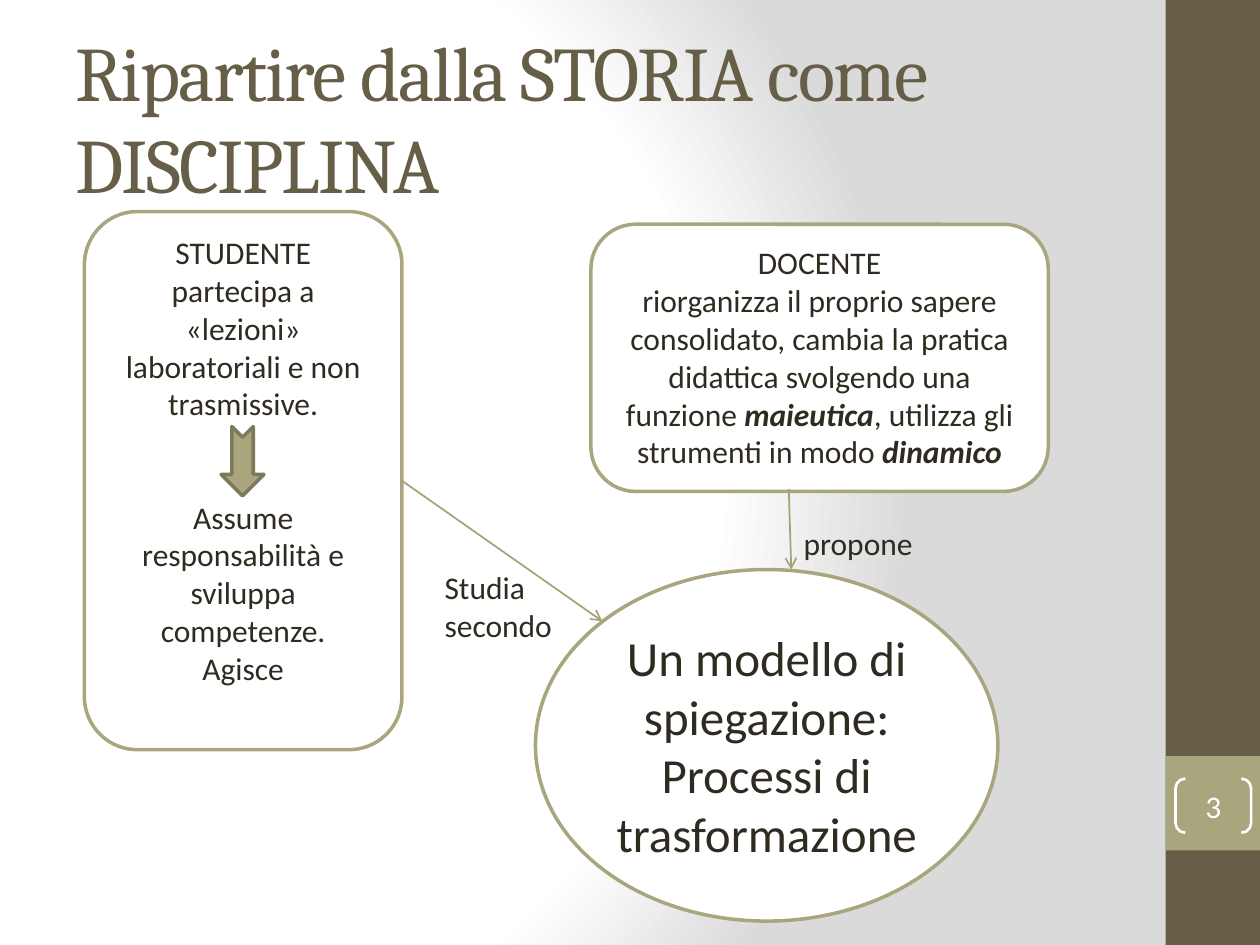
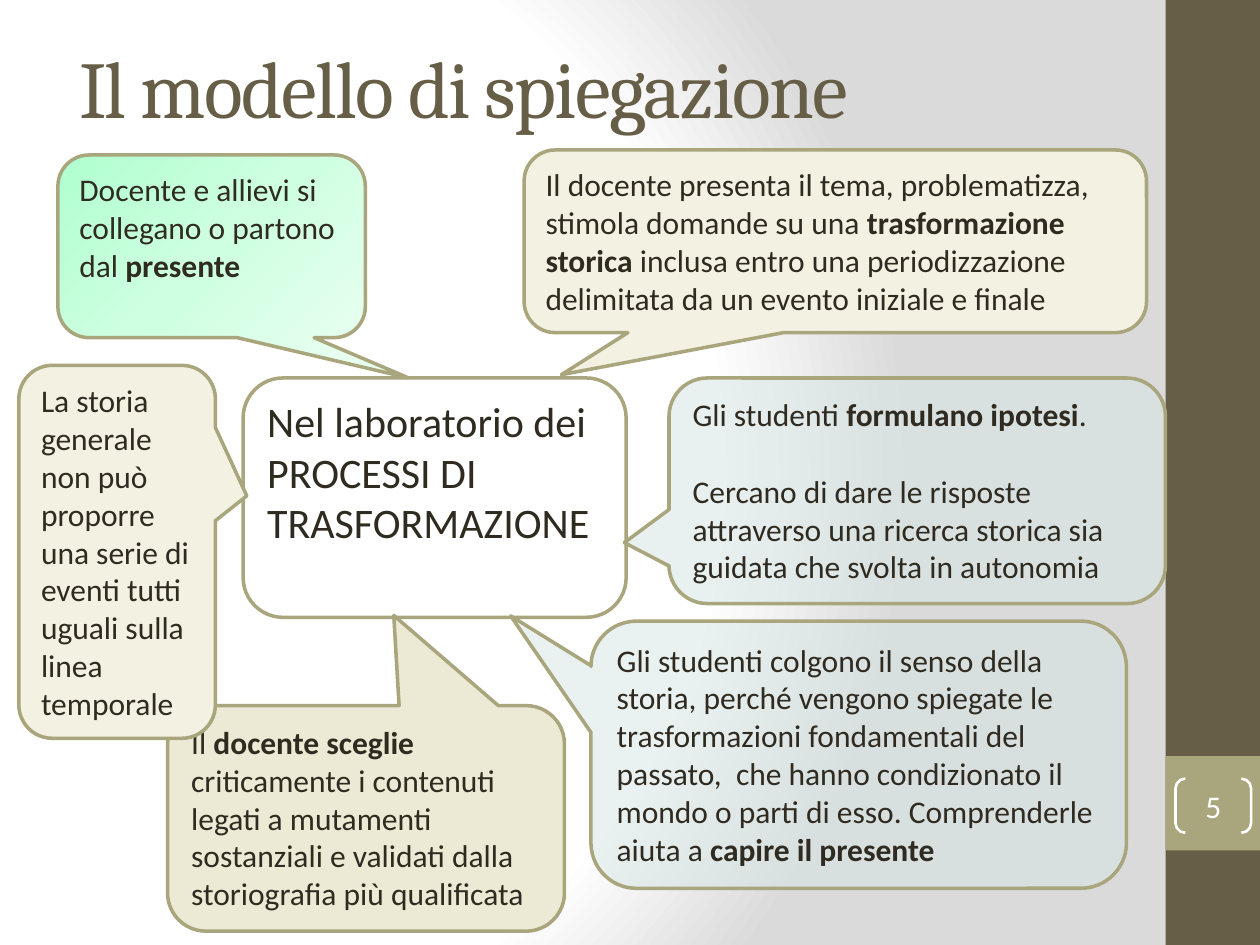
from lxml import etree
from pptx import Presentation, util as u
from pptx.dml.color import RGBColor
from pptx.enum import shapes, text
from pptx.oxml import parse_xml
from pptx.oxml.ns import nsdecls, qn

COLORS = {
    "ink": "2F2B20", "brown": "675E47", "olive": "A9A57C", "arrow": "A6A278",
    "olive_dark": "7D7A5C", "white": "FFFFFF", "grey": "DADADA", "cream": "F2F1E2",
    "sand": "ECEAD4", "mist": "D7E5E5", "mint": "B0FFD0", "mint_mid": "CDFFE0",
    "mint_pale": "E6FFEF",
}
BACKDROP = (
    [(0, "white"), (75, "white"), (100, "grey")],
    '<a:path path="circle"><a:fillToRect l="20000" t="50000" r="100000" b="50000"/></a:path>',
)
MINT = (
    [(0, "mint"), (50, "mint_mid"), (100, "mint_pale")],
    '<a:lin ang="2700000" scaled="0"/>',
)
KINDS = shapes.MSO_SHAPE
CENTER = text.PP_ALIGN.CENTER
LEFT = text.PP_ALIGN.LEFT
MIDDLE = text.MSO_ANCHOR.MIDDLE
TOP = text.MSO_ANCHOR.TOP


def color(name):
    """Return the named palette colour."""
    return RGBColor.from_string(COLORS[name])


def inches(*lengths):
    """Convert several lengths to inches."""
    return [u.Inches(length) for length in lengths]


def fill_gradient(owner, parent, gradient):
    """Give an owner a gradient whose fill element sits in parent."""
    stops, direction = gradient
    marks = "".join(
        f'<a:gs pos="{pos * 1000}"><a:srgbClr val="{COLORS[name]}"/></a:gs>'
        for pos, name in stops
    )
    owner.fill.background()
    parent = owner_parent = parent()
    blank = owner_parent.find(qn("a:noFill"))
    parent.replace(blank, parse_xml(
        f'<a:gradFill {nsdecls("a")} rotWithShape="1"><a:gsLst>{marks}</a:gsLst>'
        f"{direction}</a:gradFill>"
    ))


def write(box, paragraphs, size=18, font="Calibri", ink="ink", align=LEFT, anchor=TOP,
          italic=False, gap_before=None, gap=0, spacing=None, inset=None):
    """Write paragraphs in a box, with words between asterisks emphasised."""
    frame = box.text_frame
    frame.word_wrap = True
    frame.vertical_anchor = anchor
    if inset is not None:
        frame.margin_left = frame.margin_right = u.Inches(inset)
        frame.margin_top = frame.margin_bottom = u.Inches(inset)
    for index, words in enumerate(paragraphs):
        para = frame.add_paragraph() if index else frame.paragraphs[0]
        para.alignment = align
        if index == gap_before:
            para.space_before = u.Pt(gap)
        for part, piece in enumerate(words.split("*")):
            if not piece:
                continue
            span = para.add_run()
            span.text = piece
            span.font.size = u.Pt(size)
            span.font.name = font
            span.font.color.rgb = color(ink)
            if part % 2:
                span.font.bold = True
                span.font.italic = italic
            if spacing is not None:
                span.font._element.set("spc", str(spacing * 100))


def add_label(slide, box, paragraphs, **style):
    """Add a text box."""
    write(slide.shapes.add_textbox(*inches(*box)), paragraphs, **style)


def add_figure(slide, kind, box, fill="white", line="olive", width=2, alpha=None, adjust=()):
    """Add a preset shape with flat styling."""
    shape = slide.shapes.add_shape(kind, *inches(*box))
    shape.shadow.inherit = False
    for index, value in enumerate(adjust):
        shape.adjustments[index] = value
    if fill is None:
        shape.fill.background()
    elif isinstance(fill, tuple):
        fill_gradient(shape, lambda: shape.element.spPr, fill)
    else:
        shape.fill.solid()
        shape.fill.fore_color.rgb = color(fill)
    if alpha is not None:
        tint = shape.element.spPr.find(qn("a:solidFill")).find(qn("a:srgbClr"))
        etree.SubElement(tint, qn("a:alpha")).set("val", str(alpha * 1000))
    if line is None:
        shape.line.fill.background()
    else:
        shape.line.color.rgb = color(line)
        shape.line.width = u.Pt(width)
    return shape


def add_arrow(slide, start, end, source=None):
    """Draw an arrow, joined to the right side of a source if one is given."""
    arrow = slide.shapes.add_connector(shapes.MSO_CONNECTOR.STRAIGHT, *inches(*start, *end))
    if source is not None:
        arrow.begin_connect(source, 3)
    arrow.line.color.rgb = color("arrow")
    arrow.line.width = u.Pt(1)
    outline = arrow.line._get_or_add_ln()
    etree.SubElement(outline, qn("a:tailEnd")).set("type", "arrow")
    etree.SubElement(arrow.element.spPr, qn("a:effectLst"))


def add_sidebar(slide, box, number):
    """Draw the side band with the bracketed page number."""
    left, top, width, height = box
    add_figure(slide, KINDS.RECTANGLE, box, "brown", None)
    add_figure(slide, KINDS.RECTANGLE, (left, top + 6, width, width), "olive", None)
    bracket = add_figure(slide, KINDS.DOUBLE_BRACKET, (left + 0.08, top + 6.18, 0.6, 0.43),
                         None, "white", 1.5, adjust=(0.18,))
    write(bracket, [str(number)], ink="white", align=CENTER, anchor=MIDDLE, inset=0)


def add_page(deck, number, title, title_box, title_size):
    """Add a slide with the shared background, title and side band."""
    page = deck.slides.add_slide(deck.slide_layouts[6])
    fill_gradient(page.background, lambda: page.element.find(".//" + qn("p:bgPr")), BACKDROP)
    add_sidebar(page, (9.25, 0, 0.75, 7.5), number)
    add_label(page, title_box, [title], size=title_size, font="Cambria", ink="brown",
              anchor=MIDDLE, spacing=-1)
    return page


def add_student(slide, box):
    """Draw the student panel with its inner arrow and return the panel."""
    left, top, width, height = box
    panel = add_figure(slide, KINDS.ROUNDED_RECTANGLE, box)
    write(panel, ["STUDENTE", "partecipa a «lezioni» laboratoriali e non trasmissive.",
                  "Assume responsabilità e sviluppa competenze.", "Agisce"],
          align=CENTER, gap_before=2, gap=43)
    notch = add_figure(slide, KINDS.NOTCHED_RIGHT_ARROW,
                       (left + width / 2 - 0.28, top + 1.81, 0.55, 0.34),
                       "olive", "olive_dark")
    notch.rotation = 90
    return panel


def add_history(slide, box):
    """Draw the student, teacher and model diagram."""
    left, top, width, height = box
    model = add_figure(slide, KINDS.OVAL, (left + 3.58, top + 2.84, 3.67, 2.79))
    write(model, ["Un modello di spiegazione:", "Processi di trasformazione"],
          size=28, align=CENTER)
    student = add_student(slide, (left, top, 2.52, 4.27))
    teacher = add_figure(slide, KINDS.ROUNDED_RECTANGLE, (left + 4.02, top + 0.1, 3.63, 2.12))
    write(teacher, ["DOCENTE",
                    "riorganizza il proprio sapere consolidato, cambia la pratica didattica "
                    "svolgendo una funzione *maieutica*, utilizza gli strumenti in modo "
                    "*dinamico*"], align=CENTER, italic=True)
    add_arrow(slide, (left + 2.52, top + 2.14), (left + 4.11, top + 3.25), student)
    add_arrow(slide, (left + 5.59, top + 2.2), (left + 5.61, top + 2.84))
    add_label(slide, (left + 2.76, top + 2.78, 1.35, 0.71), ["Studia secondo"])
    add_label(slide, (left + 5.61, top + 2.43, 1.81, 0.4), ["propone"])


CALLOUTS = [
    ((5.16, 1.81, 3.94, 1.79), (-0.59, 0.23), "mist", 56,
     ["Gli studenti *formulano ipotesi*.",
      "Cercano di dare le risposte attraverso una ricerca storica sia guidata che svolta "
      "in autonomia"]),
    ((0.31, 0.04, 2.44, 1.45), (0.64, 0.72), MINT, None,
     ["Docente e allievi si collegano o partono dal *presente*"]),
    ((4.01, 0, 4.94, 1.45), (-0.44, 0.73), "cream", None,
     ["Il docente presenta il tema, problematizza, stimola domande su una *trasformazione "
      "storica* inclusa entro una periodizzazione delimitata da un evento iniziale e finale"]),
    ((4.54, 3.74, 4.25, 2.12), (-0.65, -0.52), "mist", 52,
     ["Gli studenti colgono il senso della storia, perché vengono spiegate le trasformazioni "
      "fondamentali del passato,  che hanno condizionato il mondo o parti di esso. "
      "Comprenderle aiuta a *capire il presente*"]),
    ((1.18, 4.41, 3.15, 1.79), (0.07, -0.9), "sand", None,
     ["Il *docente sceglie* criticamente i contenuti legati a mutamenti sostanziali e "
      "validati dalla storiografia più qualificata"]),
    ((0, 1.71, 1.56, 2.96), (0.66, -0.15), "cream", None,
     ["La storia generale non può proporre una serie di eventi tutti uguali sulla linea "
      "temporale"]),
]


def add_laboratory(slide, box):
    """Draw the laboratory panel and the callouts that point to it."""
    left, top, width, height = box
    panel = add_figure(slide, KINDS.ROUNDED_RECTANGLE, (left + 1.78, top + 1.81, 3.04, 1.9))
    write(panel, ["Nel laboratorio dei PROCESSI DI TRASFORMAZIONE"], size=24)
    for (x, y, wide, high), tip, fill, alpha, paragraphs in CALLOUTS:
        callout = add_figure(slide, KINDS.ROUNDED_RECTANGULAR_CALLOUT,
                             (left + x, top + y, wide, high), fill, alpha=alpha,
                             adjust=(*tip, 0.17))
        write(callout, paragraphs, gap_before=1, gap=22)


def main():
    """Build and save the deck."""
    deck = Presentation()
    deck.slide_width, deck.slide_height = inches(10, 7.5)
    history = add_page(deck, 3, "Ripartire dalla STORIA come DISCIPLINA",
                       (0.5, 0.3, 8.33, 1.25), 44)
    add_history(history, (0.67, 1.68, 7.65, 5.63))
    model = add_page(deck, 5, "Il modello di spiegazione", (0.53, 0.06, 8.33, 1.25), 46)
    add_laboratory(model, (0.15, 1.19, 9.1, 6.2))
    deck.save("out.pptx")


if __name__ == "__main__":
    main()
